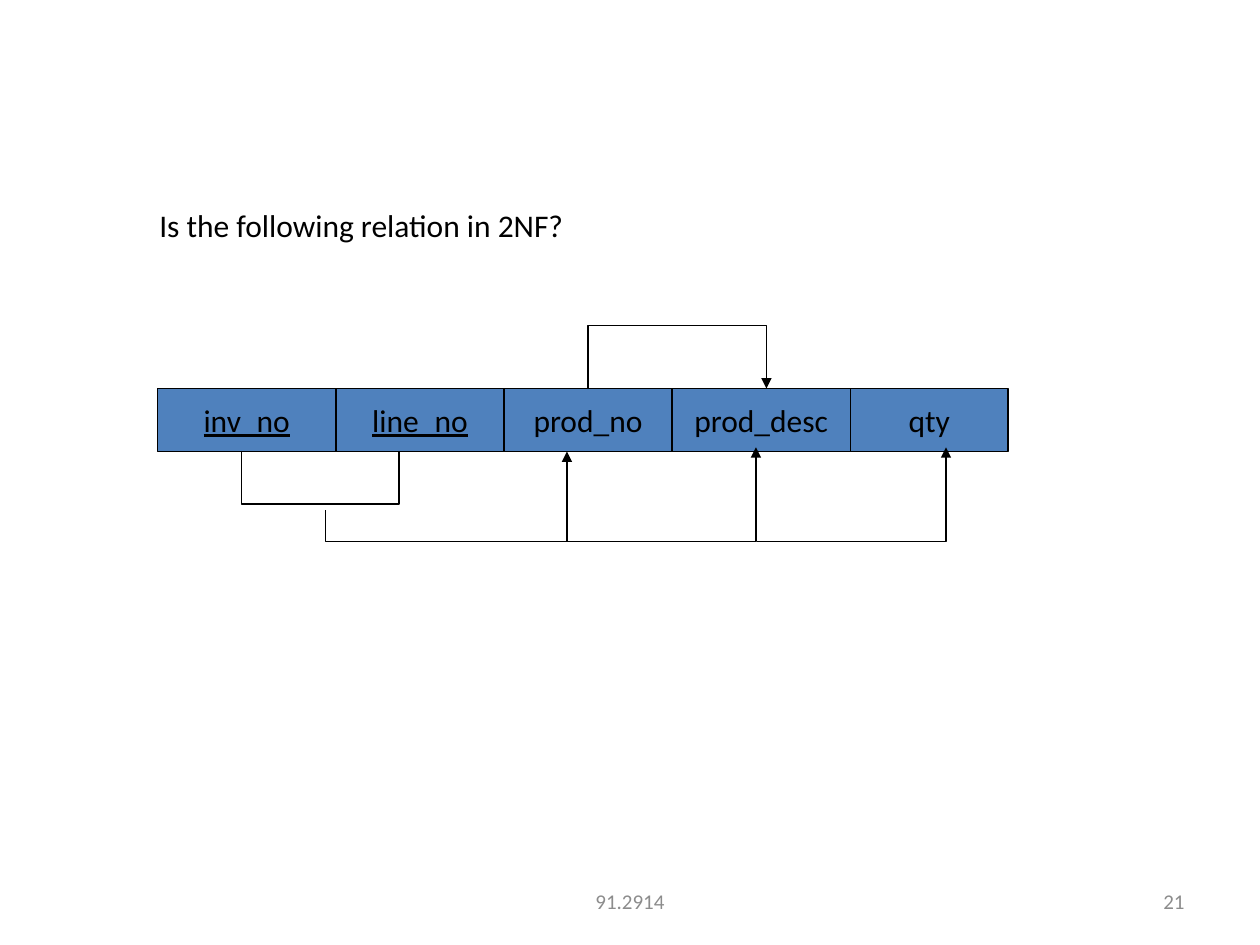
from dataclasses import dataclass

from lxml import etree
from pptx import Presentation
from pptx.dml.color import RGBColor
from pptx.enum.shapes import MSO_SHAPE
from pptx.enum.text import MSO_ANCHOR, PP_ALIGN
from pptx.oxml.ns import qn
from pptx.util import Emu, Pt

RECTANGLE = MSO_SHAPE.RECTANGLE
TOP, MIDDLE = MSO_ANCHOR.TOP, MSO_ANCHOR.MIDDLE
LEFT, CENTER, RIGHT = PP_ALIGN.LEFT, PP_ALIGN.CENTER, PP_ALIGN.RIGHT
PX = 7620  # EMU per px, 120 px to the inch


@dataclass(frozen=True)
class Theme:
    font: str = "Calibri"
    ink: RGBColor = RGBColor(0x00, 0x00, 0x00)
    muted: RGBColor = RGBColor(0x8C, 0x8C, 0x8C)
    cell: RGBColor = RGBColor(0x4F, 0x81, 0xBD)
    body_size: int = 18
    footer_size: int = 12
    line_width: float = 0.75


@dataclass(frozen=True)
class Attribute:
    name: str
    width: int
    is_key: bool = False


@dataclass(frozen=True)
class Dependency:
    points: tuple[tuple[int, int], ...]
    arrow: bool = True


THEME = Theme()

# Relation row
ROW_LEFT, ROW_TOP, ROW_HEIGHT = 150, 370, 60
ROW_BOTTOM = ROW_TOP + ROW_HEIGHT
ATTRIBUTES = (
    Attribute("inv_no", 170, is_key=True),
    Attribute("line_no", 160, is_key=True),
    Attribute("prod_no", 160),
    Attribute("prod_desc", 170),
    Attribute("qty", 150),
)

# Dependency lines below and above the row
BRACKET_Y, TRUNK_Y, UPPER_Y = 480, 516, 310
ARROW_TIP_Y = ROW_BOTTOM - 4
DEPENDENCIES = (
    Dependency(((230, ROW_BOTTOM), (230, BRACKET_Y), (380, BRACKET_Y), (380, ROW_BOTTOM)), arrow=False),
    Dependency(((310, 486), (310, TRUNK_Y), (540, TRUNK_Y), (540, ROW_BOTTOM))),
    Dependency(((540, TRUNK_Y), (720, TRUNK_Y), (720, ARROW_TIP_Y))),
    Dependency(((721, TRUNK_Y), (901, TRUNK_Y), (901, ARROW_TIP_Y))),
    Dependency(((560, ROW_TOP), (560, UPPER_Y), (730, UPPER_Y), (730, ROW_TOP))),
)


def px(length: int) -> Emu:
    return Emu(length * PX)


def write(shape, text: str, *, size: int = THEME.body_size, color: RGBColor = THEME.ink,
          align=LEFT, anchor=MIDDLE, underline: bool = False, wrap: bool = True) -> None:
    frame = shape.text_frame
    frame.word_wrap = wrap
    frame.vertical_anchor = anchor
    paragraph = frame.paragraphs[0]
    paragraph.alignment = align
    run = paragraph.add_run()
    run.text = text
    run.font.name = THEME.font
    run.font.size = Pt(size)
    run.font.color.rgb = color
    if underline:
        run.font.underline = True


def add_label(slide, text: str, left: int, top: int, width: int, height: int, **style) -> None:
    write(slide.shapes.add_textbox(px(left), px(top), px(width), px(height)), text, **style)


def outline(shape) -> None:
    shape.shadow.inherit = False
    shape.line.color.rgb = THEME.ink
    shape.line.width = Pt(THEME.line_width)


def draw_attribute(slide, attribute: Attribute, left: int) -> None:
    cell = slide.shapes.add_shape(RECTANGLE, px(left), px(ROW_TOP), px(attribute.width), px(ROW_HEIGHT))
    cell.fill.solid()
    cell.fill.fore_color.rgb = THEME.cell
    outline(cell)
    write(cell, attribute.name, align=CENTER, underline=attribute.is_key, wrap=False)


def draw_dependency(slide, dependency: Dependency) -> None:
    start, *rest = dependency.points
    builder = slide.shapes.build_freeform(*start, scale=PX)
    builder.add_line_segments(rest, close=False)
    route = builder.convert_to_shape()
    route.fill.background()
    outline(route)
    if dependency.arrow:
        line = route.line._get_or_add_ln()
        etree.SubElement(line, qn("a:tailEnd"), type="triangle")


def main() -> None:
    deck = Presentation()
    deck.slide_width, deck.slide_height = px(1200), px(900)
    slide = deck.slides.add_slide(deck.slide_layouts[6])

    # Footer
    footer = {"size": THEME.footer_size, "color": THEME.muted}
    add_label(slide, "91.2914", 410, 834, 380, 48, align=CENTER, **footer)
    add_label(slide, "21", 860, 834, 280, 48, align=RIGHT, **footer)

    # Question
    add_label(slide, "Is the following relation in 2NF?", 140, 190, 550, 60, anchor=TOP)

    # Relation and its dependencies
    left = ROW_LEFT
    for attribute in ATTRIBUTES:
        draw_attribute(slide, attribute, left)
        left += attribute.width
    for dependency in DEPENDENCIES:
        draw_dependency(slide, dependency)

    deck.save("out.pptx")


if __name__ == "__main__":
    main()
